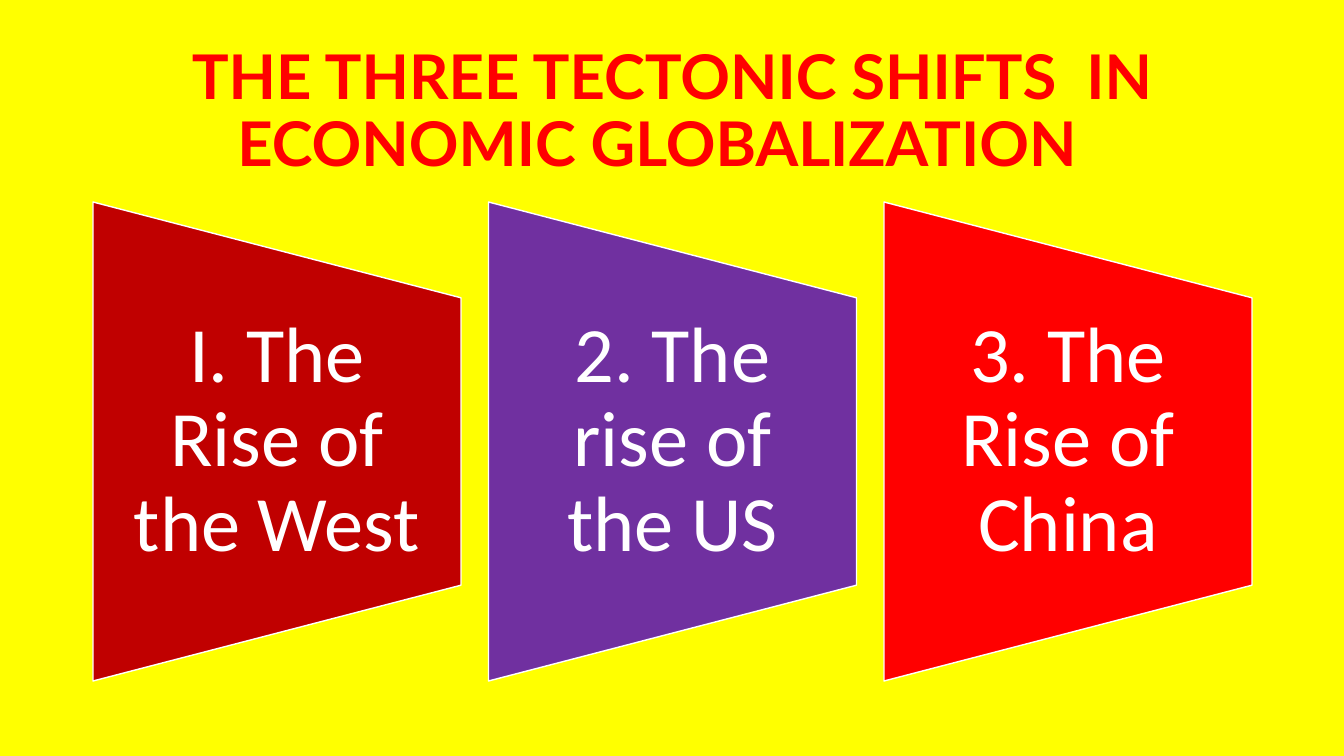
from dataclasses import dataclass

from pptx import Presentation
from pptx import util as u
from pptx.dml.color import RGBColor
from pptx.enum import shapes, text

TITLE = "THE THREE TECTONIC SHIFTS  IN ECONOMIC GLOBALIZATION  "
SHIFTS = [
    ("I. The Rise of the West", "C00000"),
    ("2. The rise of the US", "7030A0"),
    ("3. The Rise of China", "FF0000"),
]


@dataclass(frozen=True)
class Theme:
    background: str = "FFFF00"
    title_color: str = "FF0000"
    light: str = "FFFFFF"
    title_font: str = "Lato"
    body_font: str = "Calibri"
    title_size: int = 44
    body_size: int = 56
    outline: int = 1


THEME = Theme()
SLIDE_W, SLIDE_H = 1344, 756
TITLE_BOX = (93, 40, 1159, 146)
LEFT, RIGHT, TOP = 93, 1252, 202
PANEL_W, PANEL_H = 368, 479
TEXT_H, TEXT_INSET = 288, 39
SCALE = 12192000 / SLIDE_W


def px(n):
    return u.Emu(round(n * SCALE))


def rgb(code):
    return RGBColor.from_string(code)


def write(sp, content, font, size, color, bold, inset_x, inset_y):
    tf = sp.text_frame
    tf.text = content
    tf.word_wrap = True
    tf.auto_size = text.MSO_AUTO_SIZE.NONE
    tf.vertical_anchor = text.MSO_ANCHOR.MIDDLE
    tf.margin_left = tf.margin_right = px(inset_x)
    tf.margin_top = tf.margin_bottom = px(inset_y)
    p = tf.paragraphs[0]
    p.alignment = text.PP_ALIGN.CENTER
    p.line_spacing = 0.9
    p.space_before = u.Pt(0)
    f = p.runs[0].font
    f.name, f.size, f.bold = font, u.Pt(size), bold
    f.color.rgb = rgb(color)


def add_panel(s, left, label, color):
    mid_x, mid_y = left + PANEL_W / 2, TOP + PANEL_H / 2
    sp = s.shapes.add_shape(
        shapes.MSO_SHAPE.FLOWCHART_MANUAL_OPERATION,
        px(mid_x - PANEL_H / 2), px(mid_y - PANEL_W / 2), px(PANEL_H), px(PANEL_W))
    sp.rotation = 270
    sp.shadow.inherit = False
    sp.fill.solid()
    sp.fill.fore_color.rgb = rgb(color)
    sp.line.color.rgb = rgb(THEME.light)
    sp.line.width = u.Pt(THEME.outline)
    box = s.shapes.add_textbox(
        px(left), px(mid_y - TEXT_H / 2), px(PANEL_W), px(TEXT_H))
    write(box, label, THEME.body_font, THEME.body_size, THEME.light, False,
          TEXT_INSET, 0)


def main():
    prs = Presentation()
    prs.slide_width, prs.slide_height = px(SLIDE_W), px(SLIDE_H)
    s = prs.slides.add_slide(prs.slide_layouts[5])
    s.background.fill.solid()
    s.background.fill.fore_color.rgb = rgb(THEME.background)

    title = s.shapes.title
    title.left, title.top, title.width, title.height = map(px, TITLE_BOX)
    write(title, TITLE, THEME.title_font, THEME.title_size, THEME.title_color,
          True, 10, 5)

    step = (RIGHT - LEFT - PANEL_W) / (len(SHIFTS) - 1)
    for i, (label, color) in enumerate(SHIFTS):
        add_panel(s, LEFT + i * step, label, color)

    prs.save("out.pptx")


if __name__ == "__main__":
    main()
